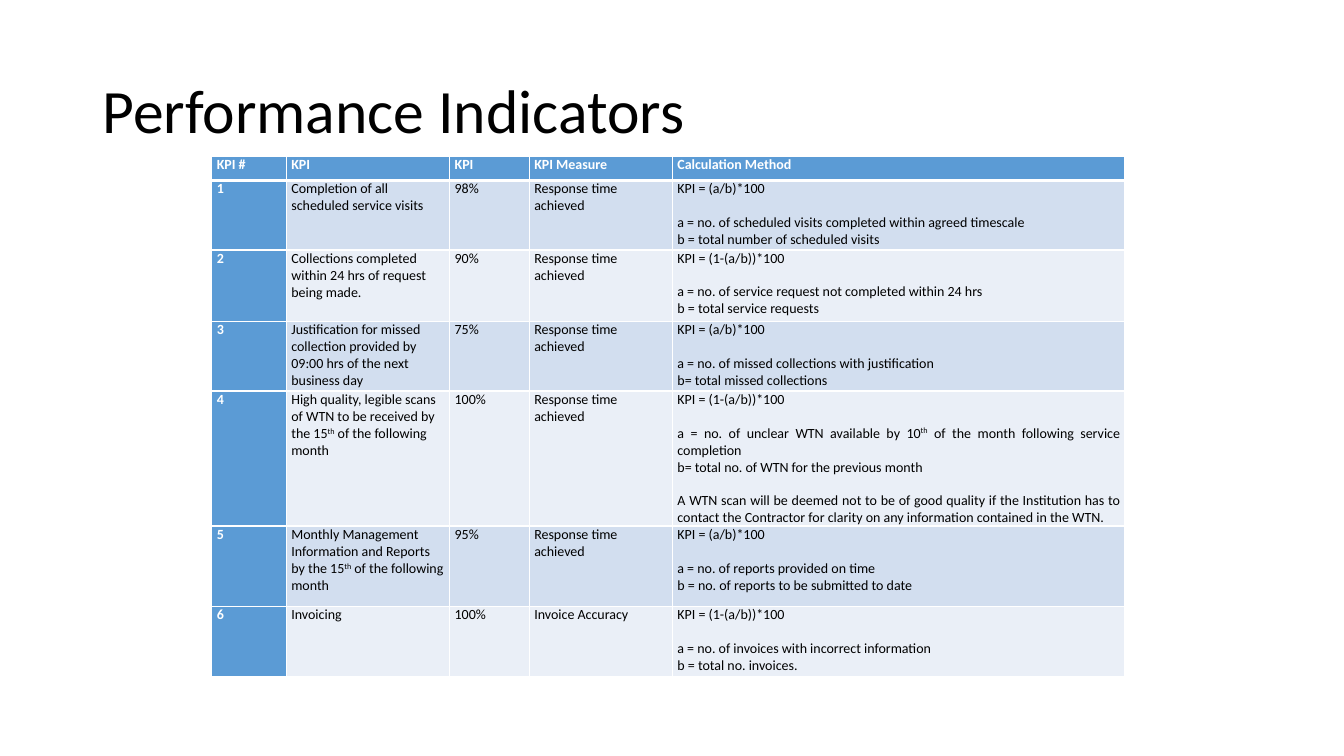
from lxml.etree import SubElement
from pptx import Presentation
from pptx.dml.color import RGBColor
from pptx.enum.text import MSO_ANCHOR, PP_ALIGN
from pptx.oxml.ns import qn
from pptx.util import Pt

PX = 9144
FONT = "Calibri"
BLACK, WHITE, BLUE = "000000", "FFFFFF", "5B9BD5"
BANDS = ("D2DEEF", "EAEFF7")

RATIO = "KPI = (a/b)*100"
INVERSE = "KPI = (1-(a/b))*100"
RESPONSE = "Response time achieved"
COLUMN_WIDTHS = (74, 162, 79, 142, 449)
ROW_HEIGHTS = (24, 69, 71, 69, 134, 80, 69)
SPACED_STARTS = ("a =", "A WTN")
JUSTIFIED_COLUMNS = (0, 2, 4)

HEADERS = ("KPI #", "KPI", "KPI", "KPI Measure", "Calculation Method")
INDICATORS = (
    ("Completion of all scheduled service visits", "98%", RESPONSE,
     (RATIO, "a = no. of scheduled visits completed within agreed timescale",
      "b = total number of scheduled visits")),
    ("Collections completed within 24 hrs of request being made.", "90%", RESPONSE,
     (INVERSE, "a = no. of service request not completed within 24 hrs",
      "b = total service requests")),
    ("Justification for missed collection provided by 09:00 hrs of the next business day",
     "75%", RESPONSE,
     (RATIO, "a = no. of missed collections with justification",
      "b= total missed collections")),
    ("High quality, legible scans of WTN to be received by the 15^th^ of the following month",
     "100%", RESPONSE,
     (INVERSE,
      "a = no. of unclear WTN available by 10^th^ of the month following service completion",
      "b= total no. of WTN for the previous month",
      "A WTN scan will be deemed not to be of good quality if the Institution has to "
      "contact the Contractor for clarity on any information contained in the WTN.")),
    ("Monthly Management Information and Reports by the 15^th^ of the following month",
     "95%", RESPONSE,
     (RATIO, "a = no. of reports provided on time",
      "b = no. of reports to be submitted to date")),
    ("Invoicing", "100%", "Invoice Accuracy",
     (INVERSE, "a = no. of invoices with incorrect information",
      "b = total no. invoices.")),
)


def color(value):
    return RGBColor.from_string(value)


def style_font(font, size, ink, bold=False):
    font.name = FONT
    font.size = Pt(size)
    font.bold = bold
    font.color.rgb = color(ink)


def write_line(paragraph, text, ink, bold):
    for index, part in enumerate(text.split("^")):
        run = paragraph.add_run()
        run.text = part
        style_font(run.font, 10, ink, bold)
        if index % 2:
            run.font._element.set("baseline", "30000")


def add_borders(cell, top, bottom):
    properties = cell._tc.get_or_add_tcPr()
    for side, width in (("L", 1), ("R", 1), ("T", top), ("B", bottom)):
        line = SubElement(properties, qn(f"a:ln{side}"), w=str(Pt(width)))
        fill = SubElement(line, qn("a:solidFill"))
        SubElement(fill, qn("a:srgbClr"), val=WHITE)


def fill_cell(cell, row, column, lines):
    accent = row == 0 or column == 0
    add_borders(cell, 3 if row == 1 else 1, 3 if row == 0 else 1)
    cell.fill.solid()
    cell.fill.fore_color.rgb = color(BLUE if accent else BANDS[(row - 1) % 2])
    cell.margin_left = cell.margin_right = 5 * PX
    cell.margin_top = cell.margin_bottom = 0
    justified = row == 0 or column in JUSTIFIED_COLUMNS
    frame = cell.text_frame
    for index, text in enumerate(lines):
        paragraph = frame.add_paragraph() if index else frame.paragraphs[0]
        paragraph.alignment = PP_ALIGN.JUSTIFY if justified else PP_ALIGN.LEFT
        if text.startswith(SPACED_STARTS):
            paragraph.space_before = Pt(12)
        write_line(paragraph, text, WHITE if accent else BLACK, accent)


def add_title(slide, left, top, width, height):
    box = slide.shapes.add_textbox(left * PX, top * PX, width * PX, height * PX)
    frame = box.text_frame
    frame.word_wrap = True
    frame.vertical_anchor = MSO_ANCHOR.MIDDLE
    frame.text = "Performance Indicators"
    paragraph = frame.paragraphs[0]
    paragraph.line_spacing = 0.9
    style_font(paragraph.runs[0].font, 44, BLACK)


def add_indicator_table(slide, left, top):
    rows = [[(header,) for header in HEADERS]]
    for number, (name, target, measure, method) in enumerate(INDICATORS, 1):
        rows.append([(str(number),), (name,), (target,), (measure,), method])
    table = slide.shapes.add_table(
        len(rows), len(HEADERS), left * PX, top * PX,
        sum(COLUMN_WIDTHS) * PX, sum(ROW_HEIGHTS) * PX).table
    for column, width in zip(table.columns, COLUMN_WIDTHS):
        column.width = width * PX
    for row, height in zip(table.rows, ROW_HEIGHTS):
        row.height = height * PX
    for row, cells in enumerate(rows):
        for column, lines in enumerate(cells):
            fill_cell(table.cell(row, column), row, column, lines)


def main():
    presentation = Presentation()
    presentation.slide_width = 1333 * PX
    presentation.slide_height = 750 * PX
    slide = presentation.slides.add_slide(presentation.slide_layouts[6])
    add_title(slide, 92, 40, 1150, 145)
    add_indicator_table(slide, 210, 155)
    presentation.save("out.pptx")


if __name__ == "__main__":
    main()
